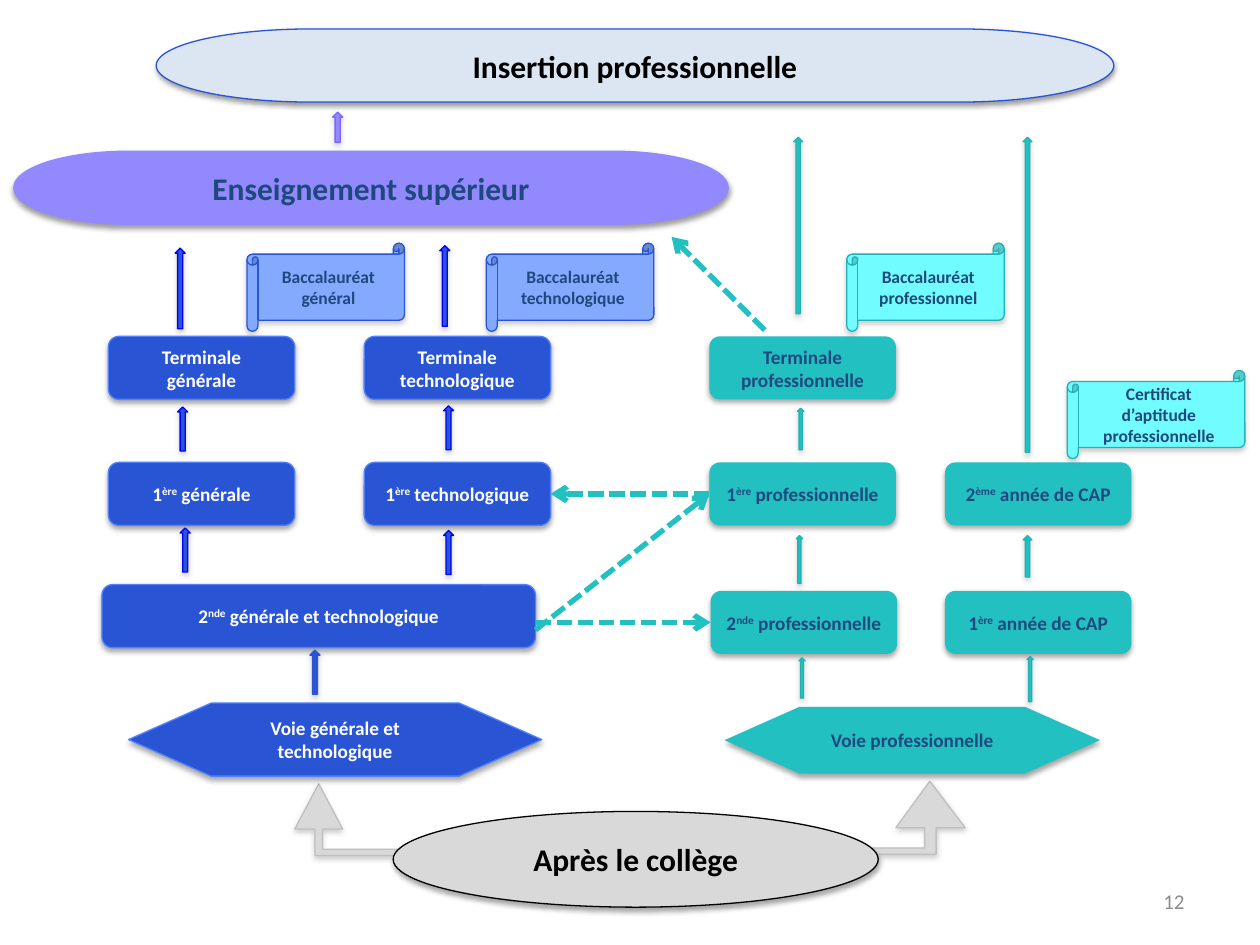
"""Build a one-slide flow chart of the school paths after collège."""

from dataclasses import dataclass
from typing import Optional

import lxml.etree
import pptx
import pptx.dml.color
import pptx.enum.dml
import pptx.enum.shapes
import pptx.enum.text
import pptx.oxml.ns
import pptx.util

Inches = pptx.util.Inches
Kind = pptx.enum.shapes.MSO_SHAPE
Align = pptx.enum.text.PP_ALIGN

BLUE, TEAL, VIOLET = "2954D4", "23C0C2", "9289FF"
NAVY, WHITE, BLACK, GREY = "1F497D", "FFFFFF", "000000", "D9D9D9"
TEAL_EDGE = "23B1B3"


@dataclass(frozen=True)
class Shadow:
    color: str
    opacity: int
    distance: float


STRONG = Shadow(BLACK, 35, 1.8)
CLOSE = Shadow(BLACK, 38, 1.6)
SOFT = Shadow("808080", 38, 1.6)


@dataclass(frozen=True)
class Style:
    kind: Kind
    fill: str
    line: Optional[str]
    shadow: Shadow
    ink: str = NAVY
    size: int = 11


@dataclass(frozen=True)
class Node:
    style: Style
    text: str
    left: float
    top: float
    width: float
    height: float


@dataclass(frozen=True)
class Arrow:
    style: Style
    left: float
    top: float
    width: float
    height: float


GENERAL_STEP = Style(Kind.FLOWCHART_ALTERNATE_PROCESS, BLUE, "4F81FF", STRONG, WHITE)
TRADE_STEP = Style(Kind.FLOWCHART_ALTERNATE_PROCESS, TEAL, None, STRONG)
GENERAL_PATH = Style(Kind.FLOWCHART_PREPARATION, BLUE, "4F81FF", STRONG, WHITE)
TRADE_PATH = Style(Kind.FLOWCHART_PREPARATION, TEAL, None, STRONG)
GENERAL_DIPLOMA = Style(Kind.HORIZONTAL_SCROLL, "84AAFF", BLUE, SOFT, size=10)
TRADE_DIPLOMA = Style(Kind.HORIZONTAL_SCROLL, "71FCFF", TEAL_EDGE, SOFT, size=10)
HIGHER = Style(Kind.FLOWCHART_TERMINATOR, VIOLET, VIOLET, CLOSE, size=18)
WORK = Style(Kind.FLOWCHART_TERMINATOR, "DCE6F2", BLUE, CLOSE, BLACK, 18)
START = Style(Kind.OVAL, GREY, BLACK, STRONG, BLACK, 18)
BLUE_ARROW = Style(Kind.UP_ARROW, BLUE, "0000FF", SOFT)
PATH_ARROW = Style(Kind.UP_ARROW, BLUE, BLUE, SOFT)
TEAL_ARROW = Style(Kind.UP_ARROW, TEAL, TEAL_EDGE, SOFT)
VIOLET_ARROW = Style(Kind.UP_ARROW, VIOLET, "7968FF", SOFT)
FORK = Style(Kind.UP_ARROW, GREY, "BFBFBF", SOFT)

STEP_WIDTH, STEP_HEIGHT = 1.48, 0.5
FINAL_TOP, MIDDLE_TOP, FIRST_TOP = 2.67, 3.67, 4.69
GENERAL_X, TECHNO_X, TRADE_X, CAP_X = 0.86, 2.89, 5.63, 7.5


def step(style: Style, text: str, left: float, top: float) -> Node:
    return Node(style, text, left, top, STEP_WIDTH, STEP_HEIGHT)


TECHNO_MIDDLE = step(GENERAL_STEP, "1^ère^ technologique", TECHNO_X, MIDDLE_TOP)
TRADE_MIDDLE = step(TRADE_STEP, "1^ère^ professionnelle", TRADE_X, MIDDLE_TOP)
TRADE_FIRST = step(TRADE_STEP, "2^nde^ professionnelle", TRADE_X + 0.01, FIRST_TOP)

NODES = [
    Node(GENERAL_PATH, "Voie générale et technologique", 1.02, 5.58, 3.28, 0.58),
    Node(TRADE_PATH, "Voie professionnelle", 5.75, 5.61, 2.98, 0.53),
    Node(GENERAL_STEP, "2^nde^ générale et technologique", 0.81, 4.64, 3.44, STEP_HEIGHT),
    TRADE_FIRST,
    step(TRADE_STEP, "1^ère^ année de CAP", CAP_X, FIRST_TOP),
    step(GENERAL_STEP, "1^ère^ générale", GENERAL_X, MIDDLE_TOP),
    TECHNO_MIDDLE,
    TRADE_MIDDLE,
    step(TRADE_STEP, "2^ème^ année de CAP", CAP_X, MIDDLE_TOP),
    step(GENERAL_STEP, "Terminale\ngénérale", GENERAL_X, FINAL_TOP),
    step(GENERAL_STEP, "Terminale technologique", TECHNO_X, FINAL_TOP),
    step(TRADE_STEP, "Terminale professionnelle", TRADE_X, FINAL_TOP),
    Node(GENERAL_DIPLOMA, "Baccalauréat général", 1.96, 1.93, 1.25, 0.7),
    Node(GENERAL_DIPLOMA, "Baccalauréat technologique", 3.86, 1.93, 1.33, 0.7),
    Node(TRADE_DIPLOMA, "Baccalauréat professionnel", 6.72, 1.93, 1.25, 0.7),
    Node(TRADE_DIPLOMA, "Certificat d’aptitude professionnelle", 8.47, 2.94, 1.41, 0.7),
    Node(HIGHER, "Enseignement supérieur", 0.11, 1.2, 5.67, 0.58),
    Node(WORK, "Insertion professionnelle", 1.24, 0.23, 7.6, 0.58),
    Node(START, "Après le collège", 3.12, 6.44, 3.85, 0.76),
]

ARROWS = [
    Arrow(PATH_ARROW, 2.46, 5.16, 0.08, 0.35),
    Arrow(BLUE_ARROW, 1.43, 4.19, 0.08, 0.35),
    Arrow(BLUE_ARROW, 1.41, 3.23, 0.08, 0.35),
    Arrow(BLUE_ARROW, 1.39, 1.97, 0.08, 0.64),
    Arrow(BLUE_ARROW, 3.52, 4.21, 0.08, 0.35),
    Arrow(BLUE_ARROW, 3.52, 3.22, 0.08, 0.35),
    Arrow(BLUE_ARROW, 3.49, 1.95, 0.08, 0.64),
    Arrow(TEAL_ARROW, 6.34, 5.22, 0.05, 0.32),
    Arrow(TEAL_ARROW, 6.32, 4.25, 0.05, 0.38),
    Arrow(TEAL_ARROW, 6.33, 3.24, 0.05, 0.33),
    Arrow(TEAL_ARROW, 6.3, 1.09, 0.07, 1.4),
    Arrow(TEAL_ARROW, 8.15, 5.21, 0.05, 0.36),
    Arrow(TEAL_ARROW, 8.12, 4.25, 0.07, 0.33),
    Arrow(TEAL_ARROW, 8.12, 1.09, 0.07, 2.5),
    Arrow(VIOLET_ARROW, 2.64, 0.89, 0.08, 0.24),
]

FORKS = [
    [(5.55, 6.76), (6.09, 6.57), (6.09, 6.73), (7.34, 6.73), (7.34, 6.57), (7.11, 6.57),
     (7.38, 6.2), (7.66, 6.57), (7.43, 6.57), (7.43, 6.78), (6.09, 6.78), (6.09, 6.94)],
    [(2.53, 6.22), (2.72, 6.58), (2.56, 6.58), (2.56, 6.74), (3.58, 6.74), (3.58, 6.59),
     (3.98, 6.77), (3.58, 6.94), (3.58, 6.79), (2.5, 6.79), (2.5, 6.58), (2.34, 6.58)],
]


def rgb(value: str) -> pptx.dml.color.RGBColor:
    return pptx.dml.color.RGBColor.from_string(value)


def add_element(parent, tag: str, **attributes: str):
    element = lxml.etree.SubElement(parent, pptx.oxml.ns.qn(tag))
    element.attrib.update(attributes)
    return element


def paint(shape, style: Style) -> None:
    shape.fill.solid()
    shape.fill.fore_color.rgb = rgb(style.fill)
    if style.line:
        shape.line.color.rgb = rgb(style.line)
        shape.line.width = pptx.util.Pt(0.75)
    else:
        shape.line.fill.background()
    shape.shadow.inherit = False
    effects = shape._element.spPr.find(pptx.oxml.ns.qn("a:effectLst"))
    outer = add_element(effects, "a:outerShdw", blurRad=str(pptx.util.Pt(3.1)),
                        dist=str(pptx.util.Pt(style.shadow.distance)), dir="5400000", rotWithShape="0")
    color = add_element(outer, "a:srgbClr", val=style.shadow.color)
    add_element(color, "a:alpha", val=str(style.shadow.opacity * 1000))


def format_span(span, size: int, ink: str, bold: bool) -> None:
    span.font.name = "Calibri"
    span.font.size = pptx.util.Pt(size)
    span.font.bold = bold
    span.font.color.rgb = rgb(ink)


def draw_shape(page, item):
    shape = page.shapes.add_shape(item.style.kind, Inches(item.left), Inches(item.top),
                                  Inches(item.width), Inches(item.height))
    paint(shape, item.style)
    return shape


def draw_node(page, node: Node):
    box = draw_shape(page, node)
    box.text_frame.text = "\n" * node.text.count("\n")
    for para, line in zip(box.text_frame.paragraphs, node.text.split("\n")):
        para.alignment = Align.CENTER
        for index, piece in enumerate(line.split("^")):
            span = para.add_run()
            span.text = piece
            format_span(span, node.style.size, node.style.ink, True)
            if index % 2:
                span.font._element.set("baseline", "30000")
    return box


def draw_fork(page, points: list) -> None:
    corners = [(Inches(x), Inches(y)) for x, y in points]
    builder = page.shapes.build_freeform(*corners[0])
    builder.add_line_segments(corners[1:], close=True)
    paint(builder.convert_to_shape(), FORK)


def draw_bridge(page, start: tuple, end: tuple):
    bridge = page.shapes.add_connector(pptx.enum.shapes.MSO_CONNECTOR.STRAIGHT,
                                       *map(Inches, start + end))
    bridge.line.color.rgb = rgb(TEAL)
    bridge.line.width = pptx.util.Pt(3)
    bridge.line.dash_style = pptx.enum.dml.MSO_LINE.SQUARE_DOT
    add_element(bridge.line._get_or_add_ln(), "a:tailEnd", type="arrow")
    add_element(bridge._element.spPr, "a:effectLst")
    return bridge


def draw_page_number(page, number: str) -> None:
    box = page.shapes.add_textbox(Inches(7.17), Inches(6.95), Inches(2.33), Inches(0.4))
    box.text_frame.word_wrap = True
    box.text_frame.vertical_anchor = pptx.enum.text.MSO_ANCHOR.MIDDLE
    box.text_frame.text = number
    para = box.text_frame.paragraphs[0]
    para.alignment = Align.RIGHT
    format_span(para.runs[0], 12, "8C8C8C", False)


def main() -> None:
    deck = pptx.Presentation()
    deck.slide_width, deck.slide_height = Inches(10), Inches(7.5)
    page = deck.slides.add_slide(deck.slide_layouts[6])
    for points in FORKS:
        draw_fork(page, points)
    boxes = {node: draw_node(page, node) for node in NODES}
    for arrow in ARROWS:
        draw_shape(page, arrow)
    draw_bridge(page, (6.07, 2.62), (5.33, 1.88))
    draw_bridge(page, (4.25, 5), (5.63, 3.92)).end_connect(boxes[TRADE_MIDDLE], 1)
    draw_bridge(page, (4.25, 4.94), (5.64, 4.94)).end_connect(boxes[TRADE_FIRST], 1)
    switch = draw_bridge(page, (5.63, 3.92), (4.37, 3.92))
    switch.begin_connect(boxes[TRADE_MIDDLE], 1)
    switch.end_connect(boxes[TECHNO_MIDDLE], 3)
    draw_page_number(page, "12")
    deck.save("out.pptx")


if __name__ == "__main__":
    main()
